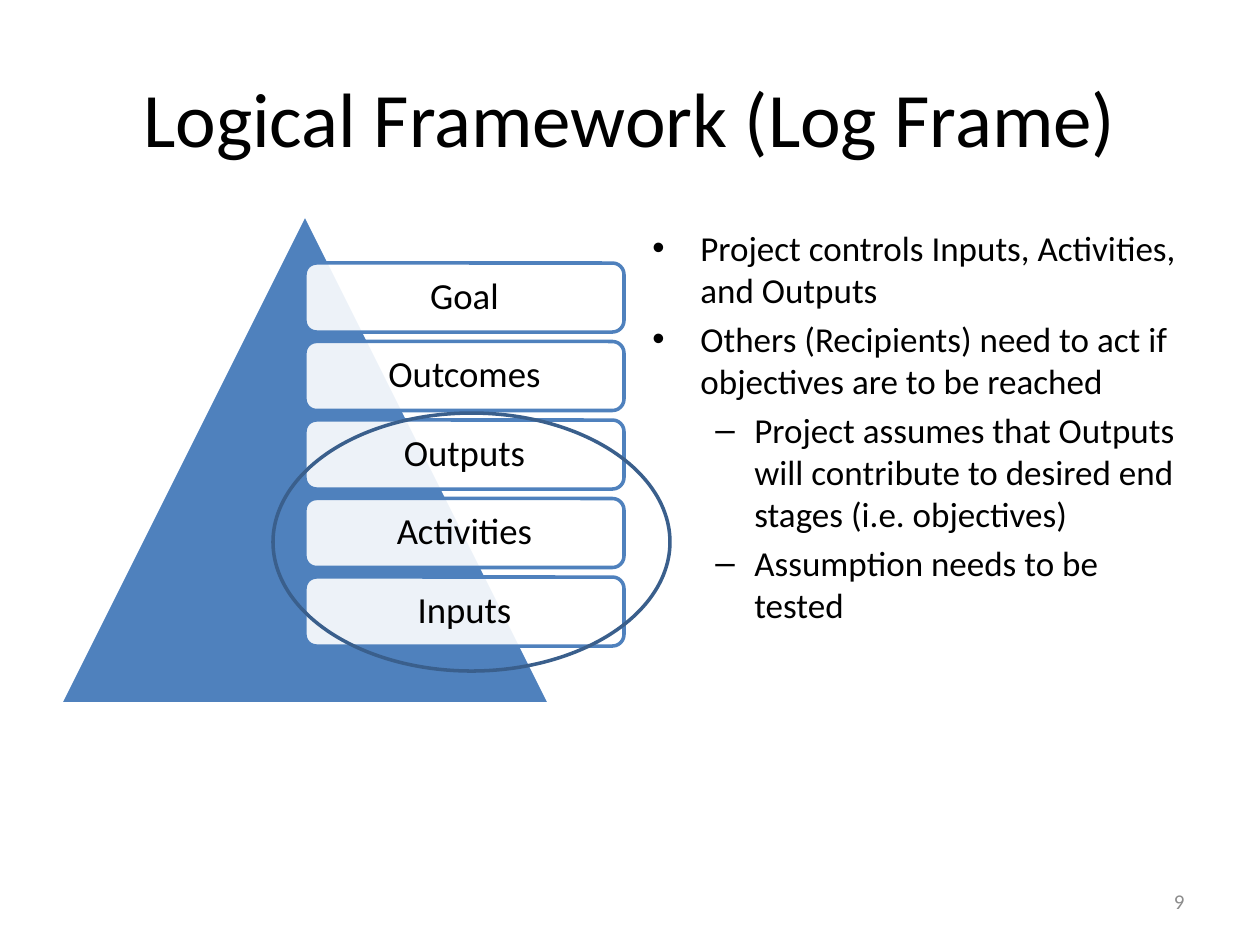
import pptx
import pptx.util
import pptx.dml.color
import pptx.enum.shapes
import pptx.enum.text
import pptx.oxml.ns
from dataclasses import dataclass
from lxml import etree

TITLE = "Logical Framework (Log Frame)"
STAGES = ["Goal", "Outcomes", "Outputs", "Activities", "Inputs"]
POINTS = [
    (0, "Project controls Inputs, Activities, and Outputs"),
    (0, "Others (Recipients) need to act if objectives are to be reached"),
    (1, "Project assumes that Outputs will contribute to desired end stages (i.e. objectives)"),
    (1, "Assumption needs to be tested"),
]
BULLETS = [("•", 48, -48), ("–", 102, -39)]  # sign, margin, indent by level
PAGE = "9"


@dataclass(frozen=True)
class Theme:
    font: str = "Calibri"
    ink: str = "000000"
    blue: str = "4F81BD"
    navy: str = "3A5F8C"
    white: str = "FFFFFF"
    grey: str = "8C8C8C"
    title: int = 44
    stage: int = 21
    body: int = 20
    page: int = 12
    line: int = 2


THEME = Theme()
SCALE = 914400 / 126
SHAPE = pptx.enum.shapes.MSO_SHAPE
ALIGN = pptx.enum.text.PP_ALIGN
ANCHOR = pptx.enum.text.MSO_ANCHOR
QN = pptx.oxml.ns.qn


def emu(px):
    return pptx.util.Emu(round(px * SCALE))


def rgb(code):
    return pptx.dml.color.RGBColor.from_string(code)


def draw(slide, kind, box, line, fill=None, alpha=None):
    """Add a preset shape; alpha is the fill's opacity in percent."""
    shape = slide.shapes.add_shape(kind, *map(emu, box))
    shape.shadow.inherit = False
    shape.line.color.rgb = rgb(line)
    shape.line.width = pptx.util.Pt(THEME.line)
    if fill is None:
        shape.fill.background()
    else:
        shape.fill.solid()
        shape.fill.fore_color.rgb = rgb(fill)
    if alpha is not None:
        tone = shape.fill._xPr.find(QN("a:solidFill"))[0]
        etree.SubElement(tone, QN("a:alpha"), val=str(alpha * 1000))
    return shape


def write(shape, lines, size, color=THEME.ink, align=ALIGN.LEFT,
          anchor=ANCHOR.MIDDLE, before=0, spacing=1.0, bullets=None):
    """Fill a shape with (level, text) lines."""
    frame = shape.text_frame
    frame.word_wrap = True
    frame.vertical_anchor = anchor
    for i, (level, text) in enumerate(lines):
        para = frame.add_paragraph() if i else frame.paragraphs[0]
        para.level = level
        para.alignment = align
        para.space_before = pptx.util.Pt(before)
        para.line_spacing = spacing
        run = para.add_run()
        run.text = text
        run.font.name = THEME.font
        run.font.size = pptx.util.Pt(size)
        run.font.color.rgb = rgb(color)
        if bullets:
            sign, margin, indent = bullets[level]
            props = para._p.get_or_add_pPr()
            props.set("marL", str(emu(margin)))
            props.set("indent", str(emu(indent)))
            etree.SubElement(props, QN("a:buFont"), typeface="Arial")
            etree.SubElement(props, QN("a:buChar"), char=sign)


def label(slide, box, lines, size, **style):
    write(slide.shapes.add_textbox(*map(emu, box)), lines, size, **style)


def pyramid(slide):
    draw(slide, SHAPE.ISOSCELES_TRIANGLE, (60, 214, 490, 490), THEME.white, THEME.blue)
    first, last = 263, 577
    step = (last - first) / (len(STAGES) - 1)
    for i, name in enumerate(STAGES):
        box = (305, first + i * step, 319, 69)
        card = draw(slide, SHAPE.ROUNDED_RECTANGLE, box, THEME.blue, THEME.white, 90)
        write(card, [(0, name)], THEME.stage, align=ALIGN.CENTER, spacing=0.9)


def main():
    deck = pptx.Presentation()
    deck.slide_width, deck.slide_height = emu(1260), emu(945)
    slide = deck.slides.add_slide(deck.slide_layouts[6])
    pyramid(slide)
    label(slide, (63, 38, 1134, 157), [(0, TITLE)], THEME.title, align=ALIGN.CENTER)
    label(slide, (640, 220, 557, 624), POINTS, THEME.body, anchor=ANCHOR.TOP,
          before=4, bullets=BULLETS)
    draw(slide, SHAPE.OVAL, (273, 413, 397, 258), THEME.navy)
    label(slide, (903, 876, 294, 50), [(0, PAGE)], THEME.page, color=THEME.grey,
          align=ALIGN.RIGHT)
    deck.save("out.pptx")


if __name__ == "__main__":
    main()
